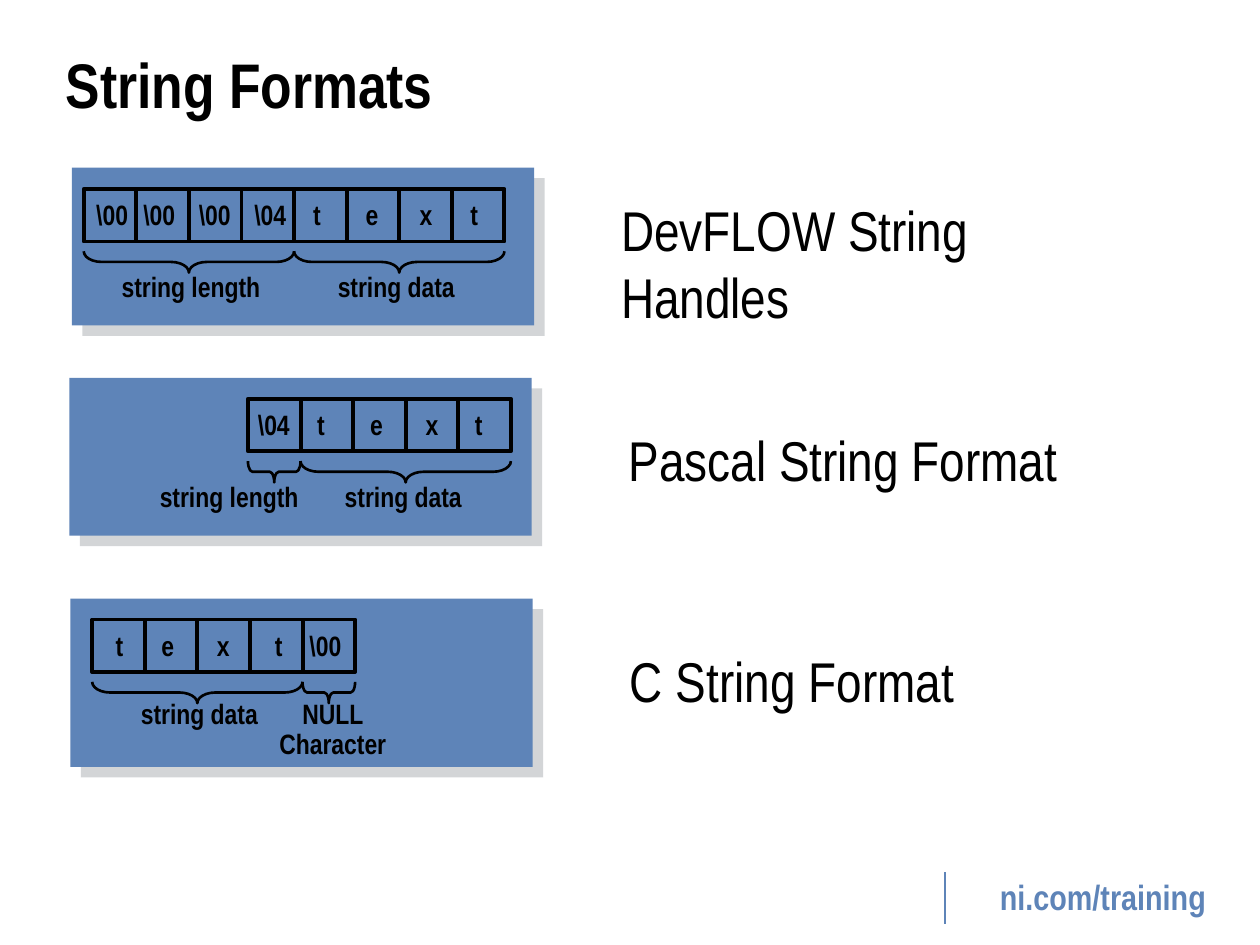
from lxml.etree import SubElement
from pptx import Presentation
from pptx.dml.color import RGBColor
from pptx.enum.shapes import MSO_CONNECTOR, MSO_SHAPE
from pptx.enum.text import MSO_ANCHOR, PP_ALIGN
from pptx.oxml import parse_xml
from pptx.oxml.ns import nsdecls, qn
from pptx.util import Cm, Pt

FONT = "Arial Narrow"
COLORS = {"text": "000000", "blue": "5E84B8", "shadow": "A8ADB0"}

CELL = 1.06
BRACE_DEPTH = 0.43
BRACE_RADIUS = 0.36
BRACE_DROP = 1.47
VALUE_TABS = [0.3, 1.27, 2.39, 3.51, 4.45, 5.56, 6.65, 7.62]

# Lengths in centimetres; braces are (first cell, number of cells).
FORMATS = [
    {"label": "DevFLOW String Handles", "label_at": (12.27, 3.81),
     "panel": (1.45, 3.38, 9.32, 3.18), "cells_at": (1.69, 3.81),
     "values": [r"\00", r"\00", r"\00", r"\04", "t", "e", "x", "t"],
     "values_left": 1.69, "braces": [(0, 4), (4, 4)],
     "captions": ["\tstring length\tstring data"],
     "captions_left": 1.69, "caption_tabs": [1.91, 6.05], "spacing": 1.0},
    {"label": "Pascal String Format", "label_at": (12.42, 8.46),
     "panel": (1.4, 7.62, 9.32, 3.18), "cells_at": (5.0, 8.04),
     "values": [r"\04", "t", "e", "x", "t"],
     "values_left": 4.95, "braces": [(0, 1), (1, 4)],
     "captions": ["\tstring length\tstring data"],
     "captions_left": 1.83, "caption_tabs": [2.54, 6.05], "spacing": 1.0},
    {"label": "C String Format", "label_at": (12.45, 12.9),
     "panel": (1.42, 12.07, 9.32, 3.39), "cells_at": (1.86, 12.49),
     "values": ["t", "e", "x", "t", r"\00"],
     "values_left": 1.86, "braces": [(0, 4), (4, 1)],
     "captions": ["\tstring data\tNULL", "\t\tCharacter"],
     "captions_left": 1.86, "caption_tabs": [1.91, 4.6], "spacing": 0.9},
]


def rgb(name):
    return RGBColor.from_string(COLORS[name])


def format_runs(frame, size, bold, color="text"):
    for para in frame.paragraphs:
        for run in para.runs:
            run.font.name = FONT
            run.font.size = Pt(size)
            run.font.bold = bold
            run.font.color.rgb = rgb(color)


def add_text(slide, place, lines, size, bold=False, color="text", tabs=(),
             spacing=1.0, align=PP_ALIGN.LEFT):
    frame = slide.shapes.add_textbox(*map(Cm, place)).text_frame
    frame.word_wrap = True
    frame.text = "\n".join(lines)
    for para in frame.paragraphs:
        para.alignment = align
        para.line_spacing = spacing
        if tabs:
            tab_list = SubElement(para._p.get_or_add_pPr(), qn("a:tabLst"))
            for position in tabs:
                SubElement(tab_list, qn("a:tab"), pos=str(Cm(position)), algn="ctr")
    format_runs(frame, size, bold, color)


def add_outline(slide, kind, place, width):
    shape = slide.shapes.add_shape(kind, *map(Cm, place))
    shape.shadow.inherit = False
    shape.fill.background()
    shape.line.color.rgb = rgb("text")
    shape.line.width = Pt(width)
    return shape


def add_panel(slide, place):
    panel = slide.shapes.add_shape(MSO_SHAPE.RECTANGLE, *map(Cm, place))
    panel.fill.solid()
    panel.fill.fore_color.rgb = rgb("blue")
    panel.line.fill.background()
    panel._element.spPr.append(parse_xml(
        f'<a:effectLst {nsdecls("a")}>'
        f'<a:outerShdw dist="{Pt(8.5)}" dir="2700000" algn="ctr" rotWithShape="0">'
        f'<a:srgbClr val="{COLORS["shadow"]}"><a:alpha val="50000"/></a:srgbClr>'
        '</a:outerShdw></a:effectLst>'))


def add_brace(slide, left, center_y, span):
    """Draw a brace that opens upwards by turning a left brace on its side."""
    place = (left + (span - BRACE_DEPTH) / 2, center_y - span / 2, BRACE_DEPTH, span)
    brace = add_outline(slide, MSO_SHAPE.LEFT_BRACE, place, 1.5)
    brace.rotation = 270
    # Wide braces get wide curves, in proportion to the cells they cover.
    brace.adjustments[0] = BRACE_RADIUS / BRACE_DEPTH * span / (4 * CELL)
    brace.adjustments[1] = 0.5


def add_format(slide, item):
    add_panel(slide, item["panel"])
    add_text(slide, (*item["label_at"], 11, 1.48), [item["label"]], 32)
    left, top = item["cells_at"]
    count = len(item["values"])
    for index in range(count):
        place = (left + index * CELL, top, CELL, CELL)
        add_outline(slide, MSO_SHAPE.RECTANGLE, place, 2.25)
    values = "".join("\t" + value for value in item["values"])
    add_text(slide, (item["values_left"], top + 0.05, count * CELL + 0.4, 0.94),
             [values], 16, True, tabs=VALUE_TABS)
    add_text(slide, (item["captions_left"], top + 1.5, 8.89, 0.94 * len(item["captions"])),
             item["captions"], 16, True, tabs=item["caption_tabs"],
             spacing=item["spacing"])
    for first, cells in item["braces"]:
        add_brace(slide, left + first * CELL, top + BRACE_DROP, cells * CELL)


def add_footer(slide):
    add_text(slide, (19.48, 17.53, 5.51, 1.12), ["ni.com/training"], 20, True,
             "blue", align=PP_ALIGN.CENTER)
    rule = slide.shapes.add_connector(
        MSO_CONNECTOR.STRAIGHT, Cm(19.05), Cm(17.58), Cm(19.05), Cm(18.62))
    rule.line.color.rgb = rgb("blue")
    rule.line.width = Pt(1.5)
    SubElement(rule._element.spPr, qn("a:effectLst"))


def add_title(slide, text):
    title = slide.shapes.title
    title.left, title.top, title.width, title.height = map(Cm, (1.07, 0.2, 23.7, 2.97))
    frame = title.text_frame
    frame.text = text
    frame.vertical_anchor = MSO_ANCHOR.MIDDLE
    frame.paragraphs[0].alignment = PP_ALIGN.LEFT
    format_runs(frame, 36, True)


def main():
    deck = Presentation()
    deck.slide_width, deck.slide_height = Cm(25.4), Cm(19.05)
    slide = deck.slides.add_slide(deck.slide_layouts[5])
    add_title(slide, "String Formats")
    for item in FORMATS:
        add_format(slide, item)
    add_footer(slide)
    deck.save("out.pptx")


if __name__ == "__main__":
    main()
